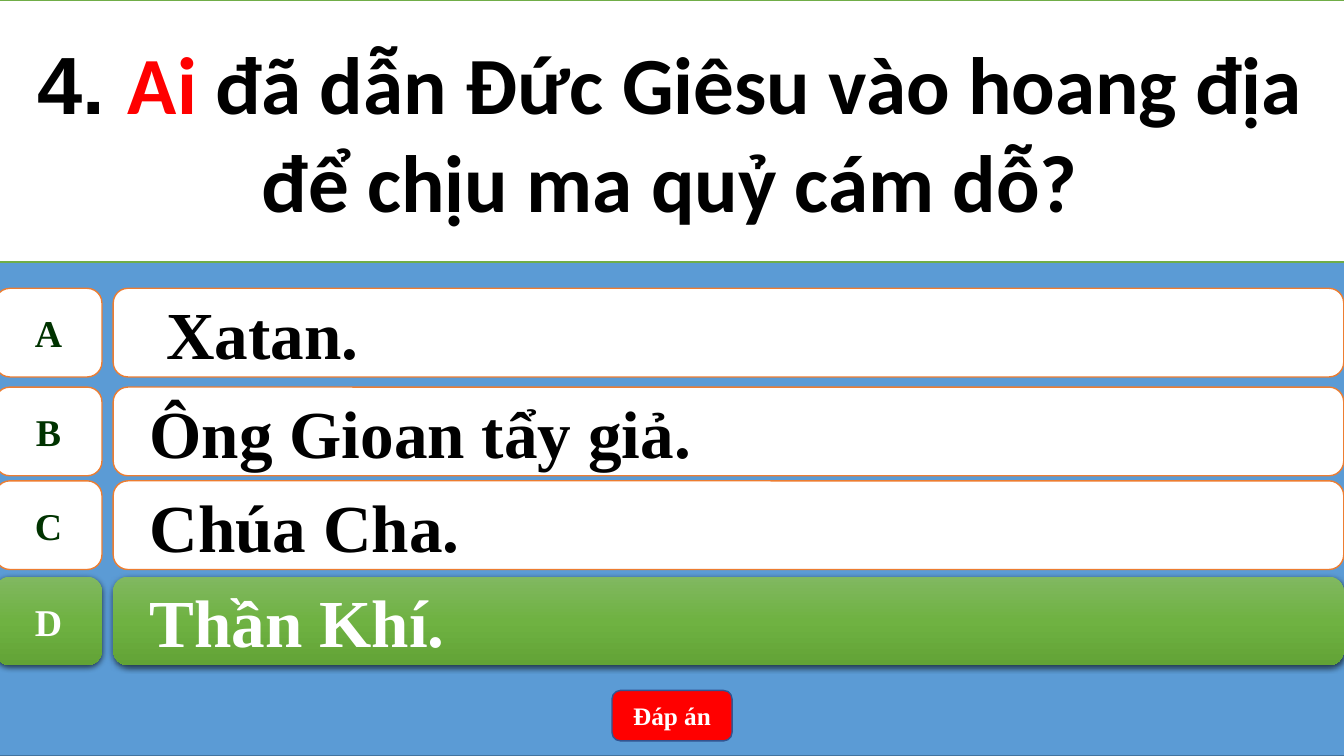
import copy

from pptx import Presentation
from pptx import util as u
from pptx.dml.color import RGBColor
from pptx.enum import shapes, text
from pptx.oxml import parse_xml
from pptx.oxml.ns import nsdecls

WHITE = RGBColor(0xFF, 0xFF, 0xFF)
BLACK = RGBColor(0x00, 0x00, 0x00)
RED = RGBColor(0xFF, 0x00, 0x00)
BLUE = RGBColor(0x5B, 0x9B, 0xD5)
BLUE_EDGE = RGBColor(0x43, 0x73, 0x9E)
BUTTON_EDGE = RGBColor(0x32, 0x54, 0x91)
ORANGE = RGBColor(0xED, 0x7D, 0x31)
GREEN = RGBColor(0x70, 0xAD, 0x47)
DARK_GREEN = RGBColor(0x00, 0x33, 0x00)
CORRECT_GREENS = (RGBColor(0x81, 0xB8, 0x61), RGBColor(0x6F, 0xB2, 0x42),
                  RGBColor(0x62, 0xA3, 0x36))

SHADOW = (
    f'<a:effectLst {nsdecls("a")}>'
    '<a:outerShdw blurRad="57150" dist="19050" dir="5400000" algn="ctr" rotWithShape="0">'
    '<a:srgbClr val="000000"><a:alpha val="63000"/></a:srgbClr>'
    '</a:outerShdw></a:effectLst>'
)


class QuizSlide:
    """Places elements on a grid of 100 columns by 100 rows."""

    serif = "Times New Roman"
    sans = "Calibri"

    def __init__(self, deck):
        self.slide = deck.slides.add_slide(deck.slide_layouts[5])
        self.column = deck.slide_width / 100
        self.row = deck.slide_height / 100

    def cells(self, left, top, width, height):
        return (round(left * self.column), round(top * self.row),
                round(width * self.column), round(height * self.row))

    def paint(self, shape, fill, edge):
        shape.fill.solid()
        shape.fill.fore_color.rgb = fill
        shape.line.color.rgb = edge
        shape.line.width = u.Pt(1)

    def paint_correct(self, shape):
        """Green three-stop gradient from top to bottom, with a soft shadow."""
        shape.line.fill.background()
        shape.fill.gradient()
        shape.fill.gradient_angle = 270
        first = shape.fill.gradient_stops[0]._gs
        first.addnext(copy.deepcopy(first))
        for index, (stop, green) in enumerate(zip(shape.fill.gradient_stops, CORRECT_GREENS)):
            stop.position = index / 2
            stop.color.rgb = green
        properties = shape._element.spPr
        properties.remove(properties.find("{*}effectLst"))
        properties.append(parse_xml(SHADOW))

    def box(self, kind, area):
        shape = self.slide.shapes.add_shape(kind, *self.cells(*area))
        shape.shadow.inherit = False
        return shape

    def backdrop(self, area):
        panel = self.box(shapes.MSO_SHAPE.RECTANGLE, area)
        self.paint(panel, BLUE, BLUE_EDGE)
        self.slide.shapes._spTree.insert(2, panel._element)

    def question(self, area, parts):
        title = self.slide.shapes.title
        title.left, title.top, title.width, title.height = self.cells(*area)
        self.paint(title, WHITE, GREEN)
        frame = title.text_frame
        frame.auto_size = text.MSO_AUTO_SIZE.NONE
        frame.vertical_anchor = text.MSO_ANCHOR.MIDDLE
        paragraph = frame.paragraphs[0]
        paragraph.alignment = text.PP_ALIGN.CENTER
        paragraph.font.size = u.Pt(58)
        paragraph.font.bold = True
        for words, font, color in parts:
            run = paragraph.add_run()
            run.text = words
            run.font.name = font
            run.font.color.rgb = color

    def label(self, shape, words, size, color, align=text.PP_ALIGN.CENTER, wrap=True):
        frame = shape.text_frame
        frame.word_wrap = wrap
        frame.vertical_anchor = text.MSO_ANCHOR.MIDDLE
        paragraph = frame.paragraphs[0]
        paragraph.text = words
        paragraph.alignment = align
        font = paragraph.font
        font.name, font.size, font.bold = self.serif, u.Pt(size), True
        font.color.rgb = color
        return paragraph

    def option(self, top, letter, answer, correct=False):
        tag = self.box(shapes.MSO_SHAPE.FLOWCHART_ALTERNATE_PROCESS, (-0.36, top, 7.95, 11.73))
        bar = self.box(shapes.MSO_SHAPE.ROUNDED_RECTANGLE, (8.42, top, 91.56, 11.73))
        for shape in (tag, bar):
            if correct:
                self.paint_correct(shape)
            else:
                self.paint(shape, WHITE, ORANGE)
        self.label(tag, letter, 27, WHITE if correct else DARK_GREEN, wrap=False)
        paragraph = self.label(bar, answer, 48, WHITE if correct else BLACK,
                               text.PP_ALIGN.LEFT)
        paragraph.level = 1
        indents = paragraph._p.get_or_add_pPr()
        indents.set("marL", str(u.Inches(0.5)))
        indents.set("indent", str(u.Inches(-0.28)))

    def button(self, area, words):
        shape = self.box(shapes.MSO_SHAPE.ROUNDED_RECTANGLE, area)
        self.paint(shape, RED, BUTTON_EDGE)
        self.label(shape, words, 18, WHITE)


def main():
    deck = Presentation()
    deck.slide_width, deck.slide_height = u.Inches(13.33), u.Inches(7.5)
    quiz = QuizSlide(deck)
    quiz.backdrop((-0.38, 0, 100.45, 100))
    quiz.question((-0.38, 0, 100.45, 34.67), [
        ("4. ", "Arial", BLACK),
        ("Ai ", quiz.sans, RED),
        ("đã dẫn Đức Giêsu vào hoang địa để chịu ma quỷ cám dỗ?", quiz.sans, BLACK),
    ])
    quiz.option(38.13, "A", " Xatan.")
    quiz.option(51.2, "B", "Ông Gioan tẩy giả.")
    quiz.option(63.6, "C", "Chúa Cha.")
    quiz.option(76.27, "D", "Thần Khí.", correct=True)
    quiz.button((45.54, 91.33, 8.93, 6.67), "Đáp án")
    deck.save("out.pptx")


if __name__ == "__main__":
    main()
